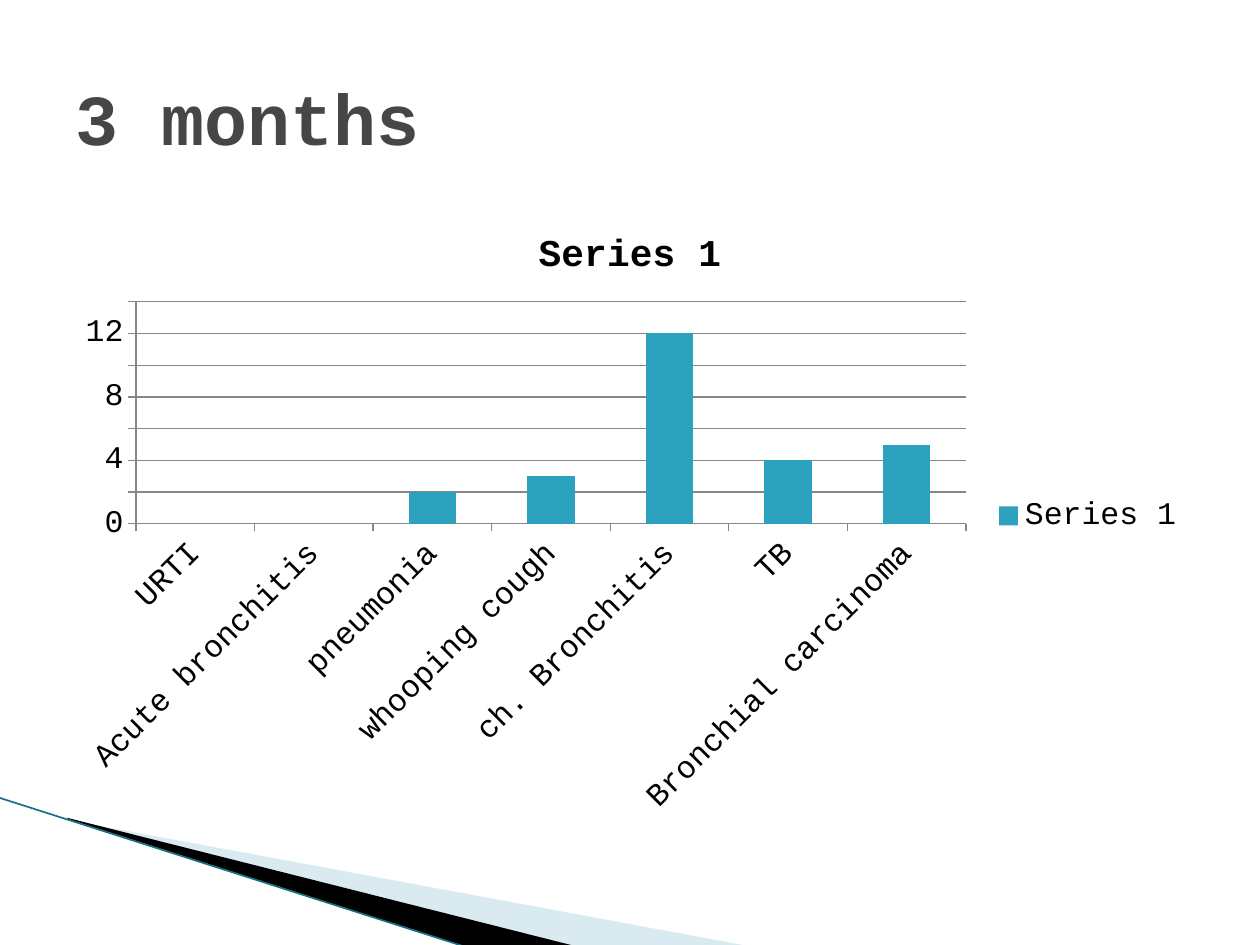
from lxml import etree
from pptx import Presentation
from pptx.chart.data import CategoryChartData
from pptx.dml.color import RGBColor
from pptx.enum.chart import XL_CHART_TYPE as ChartType
from pptx.enum.chart import XL_LEGEND_POSITION as LegendPosition
from pptx.enum.chart import XL_TICK_MARK as TickMark
from pptx.enum.shapes import MSO_CONNECTOR as Connector
from pptx.enum.text import MSO_ANCHOR as Anchor
from pptx.oxml.ns import qn
from pptx.util import Inches, Pt

FONT = "Courier New"
COLORS = {
    "title": "464646",
    "text": "000000",
    "bar": "2DA2BF",
    "grid": "868686",
    "pale_wedge": "A0CBDC",
    "dark_wedge": "000000",
    "edge": "1A6F84",
}
CASES = {
    "URTI": 0,
    "Acute bronchitis": 0,
    "pneumonia": 2,
    "whooping cough": 3,
    "ch. Bronchitis": 12,
    "TB": 4,
    "Bronchial carcinoma": 5,
}


def color(name):
    return RGBColor.from_string(COLORS[name])


def style_font(font, size, name, bold=False):
    font.name = FONT
    font.size = Pt(size)
    font.bold = bold
    font.color.rgb = color(name)


def add_wedge(page, left, top, points, name, opacity=None):
    """Draw a filled outline whose points are inches from left and top."""
    corners = [(Inches(left + x), Inches(top + y)) for x, y in points]
    builder = page.shapes.build_freeform(*corners[0], scale=1.0)
    builder.add_line_segments(corners[1:], close=True)
    wedge = builder.convert_to_shape()
    wedge.shadow.inherit = False
    wedge.fill.solid()
    wedge.fill.fore_color.rgb = color(name)
    wedge.line.fill.background()
    if opacity is not None:
        tint = wedge.fill._xPr.find(qn("a:solidFill"))[0]
        etree.SubElement(tint, qn("a:alpha")).set("val", str(opacity * 1000))


def add_corner_decoration(page, left, top):
    add_wedge(page, left, top,
              [(0.56, 0.18), (5.96, 1.18), (4.57, 1.18), (0.56, 0.17)],
              "pale_wedge", opacity=40)
    add_wedge(page, left, top,
              [(0.54, 0.16), (4.58, 1.18), (3.73, 1.19), (0.55, 0.17)],
              "dark_wedge")
    edge = page.shapes.add_connector(
        Connector.STRAIGHT, Inches(left), Inches(top),
        Inches(left + 3.72), Inches(top + 1.19))
    edge.line.color.rgb = color("edge")
    edge.line.width = Pt(0.95)
    etree.SubElement(edge._element.spPr, qn("a:effectLst"))


def add_title(page, left, top, width, height):
    box = page.shapes.add_textbox(
        Inches(left), Inches(top), Inches(width), Inches(height))
    frame = box.text_frame
    frame.word_wrap = True
    frame.vertical_anchor = Anchor.MIDDLE
    para = frame.paragraphs[0]
    para.text = "3 months"
    style_font(para.font, 41, "title", bold=True)


def add_case_chart(page, left, top, width, height):
    data = CategoryChartData()
    data.categories = list(CASES)
    data.add_series("Series 1", list(CASES.values()))
    chart = page.shapes.add_chart(
        ChartType.COLUMN_CLUSTERED, Inches(left), Inches(top),
        Inches(width), Inches(height), data).chart
    style_font(chart.font, 18, "text")

    chart.has_title = True
    heading = chart.chart_title.text_frame.paragraphs[0]
    heading.text = "Series 1"
    style_font(heading.font, 21.6, "text", bold=True)
    chart.chart_title.include_in_layout = False

    chart.has_legend = True
    chart.legend.position = LegendPosition.RIGHT
    chart.legend.include_in_layout = False

    plot = chart.plots[0]
    plot.gap_width = 150
    plot.vary_by_categories = False
    bars = plot.series[0].format.fill
    bars.solid()
    bars.fore_color.rgb = color("bar")

    chart.value_axis.has_major_gridlines = True
    lines = [chart.value_axis.major_gridlines.format.line]
    for axis in (chart.category_axis, chart.value_axis):
        axis.major_tick_mark = TickMark.OUTSIDE
        axis.minor_tick_mark = TickMark.NONE
        lines.append(axis.format.line)
    for line in lines:
        line.color.rgb = color("grid")
        line.width = Pt(0.75)


def main():
    deck = Presentation()
    deck.slide_width = Inches(10)
    deck.slide_height = Inches(7.5)
    page = deck.slides.add_slide(deck.slide_layouts[6])
    add_corner_decoration(page, -0.01, 6.33)
    add_case_chart(page, 0.5, 1.62, 9, 4.95)
    add_title(page, 0.5, 0.3, 9, 1.25)
    deck.save("out.pptx")


if __name__ == "__main__":
    main()
